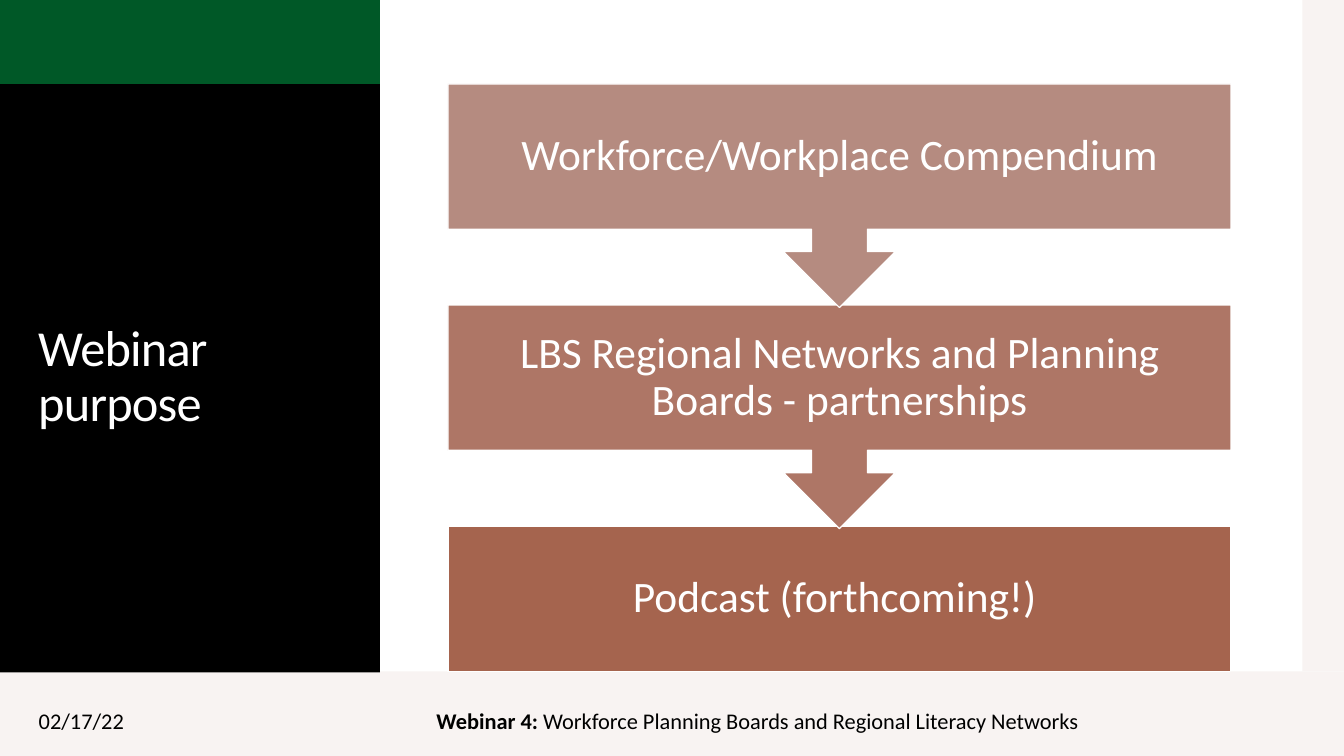
import pptx
import pptx.util
import pptx.dml.color
import pptx.enum.shapes
import pptx.enum.text

Pt = pptx.util.Pt
SHAPES = pptx.enum.shapes.MSO_SHAPE
ALIGN = pptx.enum.text.PP_ALIGN

TITLE = "Webinar purpose"
DATE = "02/17/22"
FOOTER = [("Webinar 4: ", True),
          ("Workforce Planning Boards and Regional Literacy Networks", False)]
STEPS = [("Workforce/Workplace Compendium", "B58B80"),
         ("LBS Regional Networks and Planning Boards - partnerships", "AE7666"),
         ("Podcast (forthcoming!) ", "A5644E")]

THEME = {"font": "Calibri", "pale": "F8F3F2", "green": "005827",
         "black": "000000", "white": "FFFFFF",
         "title": 36, "step": 31, "footer": 16, "outline": 0.85}

PAGE_WIDTH, PAGE_HEIGHT = 960, 540
BODY_HEIGHT = 479.5
PANEL_WIDTH = 271.4
STEP_LEFT, STEP_TOP, STEP_WIDTH = 320, 60, 559.2
STEP_HEIGHT, CALLOUT_HEIGHT, STEP_PITCH = 103.8, 159.7, 157.9
STEP_INSET = 17.3


def color(value):
    return pptx.dml.color.RGBColor.from_string(value)


def add_block(page, kind, area, fill, outline=None):
    block = page.shapes.add_shape(kind, *map(Pt, area))
    block.shadow.inherit = False
    block.fill.solid()
    block.fill.fore_color.rgb = color(fill)
    if outline:
        block.line.color.rgb = color(outline)
        block.line.width = Pt(THEME["outline"])
    else:
        block.line.fill.background()
    return block


def write(box, spans, size, ink, align=ALIGN.LEFT, spacing=1.0):
    frame = box.text_frame
    frame.word_wrap = True
    frame.vertical_anchor = pptx.enum.text.MSO_ANCHOR.MIDDLE
    para = frame.paragraphs[0]
    para.alignment = align
    para.line_spacing = spacing
    para.font.name = THEME["font"]
    para.font.size = Pt(size)
    para.font.color.rgb = color(ink)
    for text, bold in spans:
        span = para.add_run()
        span.text = text
        if bold:
            span.font.bold = True
    return para


def add_text(page, area, *style, **options):
    box = page.shapes.add_textbox(*map(Pt, area))
    return write(box, *style, **options)


def add_step(page, index):
    text, fill = STEPS[index]
    last = index == len(STEPS) - 1
    kind = SHAPES.RECTANGLE if last else SHAPES.DOWN_ARROW_CALLOUT
    height = STEP_HEIGHT if last else CALLOUT_HEIGHT
    area = (STEP_LEFT, STEP_TOP + index * STEP_PITCH, STEP_WIDTH, height)
    block = add_block(page, kind, area, fill, THEME["white"])
    frame = block.text_frame
    frame.margin_left = frame.margin_right = Pt(STEP_INSET)
    frame.margin_top = frame.margin_bottom = Pt(STEP_INSET)
    write(block, [(text, False)], THEME["step"], THEME["white"],
          align=ALIGN.CENTER, spacing=0.9)


def main():
    deck = pptx.Presentation()
    deck.slide_width, deck.slide_height = Pt(PAGE_WIDTH), Pt(PAGE_HEIGHT)
    page = deck.slides.add_slide(deck.slide_layouts[6])

    bands = [((-3, BODY_HEIGHT, 963, 61), "pale"),
             ((0, 0, PANEL_WIDTH, BODY_HEIGHT), "green"),
             ((930.4, 0, 30, BODY_HEIGHT), "pale"),
             ((0, 60, PANEL_WIDTH, 420.3), "black")]
    for area, fill in bands:
        add_block(page, SHAPES.RECTANGLE, area, THEME[fill])

    footers = [((20.6, 500.6, 216, 28.8), [(DATE, False)]),
               ((304.7, 500.6, 522.7, 28.8), FOOTER)]
    for area, spans in footers:
        add_text(page, area, spans, THEME["footer"], THEME["black"])

    heading = add_text(page, (20.2, 88.6, 231.8, 362.2), [(TITLE, False)],
                       THEME["title"], THEME["white"], spacing=0.9)
    heading.runs[0]._r.get_or_add_rPr().set("spc", "-60")

    for index in reversed(range(len(STEPS))):
        add_step(page, index)

    deck.save("out.pptx")


if __name__ == "__main__":
    main()
